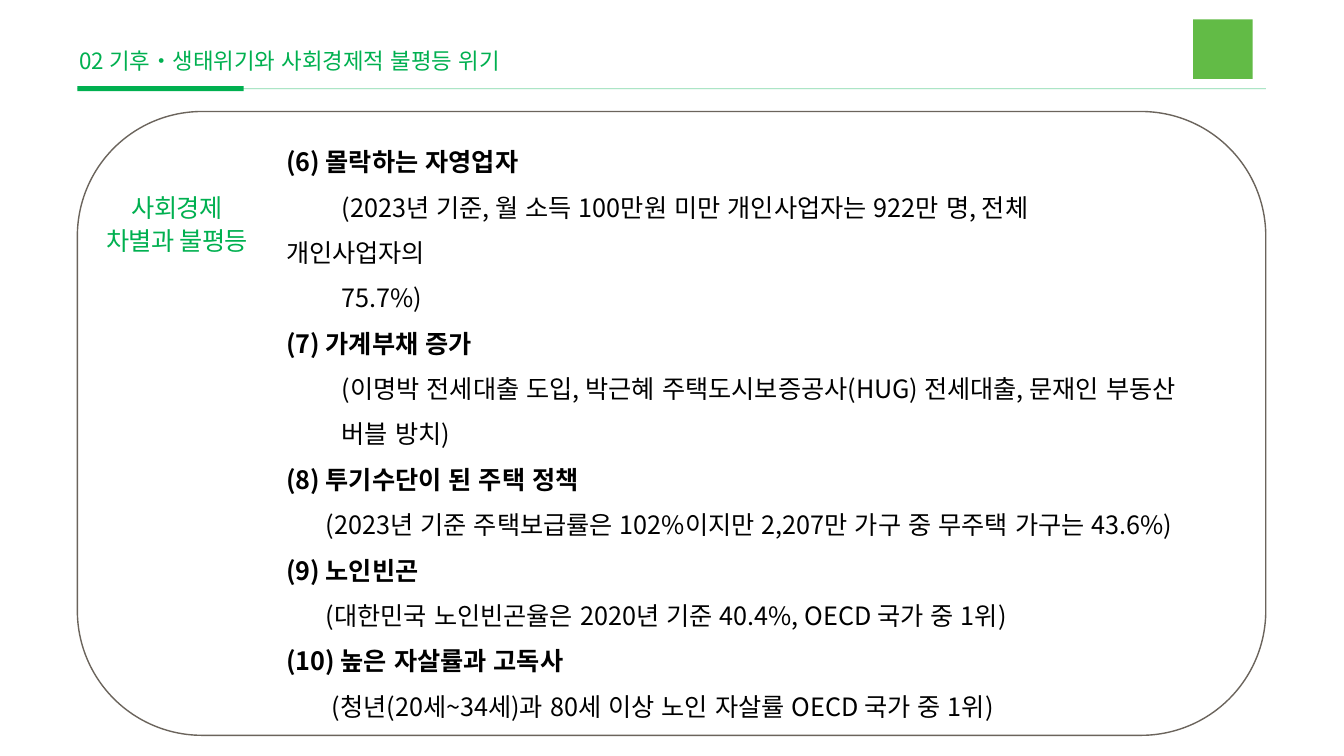
from lxml import etree
from pptx import Presentation
from pptx.dml.color import RGBColor
from pptx.enum.lang import MSO_LANGUAGE_ID
from pptx.enum.shapes import MSO_CONNECTOR, MSO_SHAPE
from pptx.enum.text import MSO_ANCHOR, MSO_AUTO_SIZE, PP_ALIGN
from pptx.oxml.ns import qn
from pptx.util import Cm, Pt

RECT, ROUNDED = MSO_SHAPE.RECTANGLE, MSO_SHAPE.ROUNDED_RECTANGLE
STRAIGHT = MSO_CONNECTOR.STRAIGHT
LEFT, CENTER = PP_ALIGN.LEFT, PP_ALIGN.CENTER
TOP, NO_FIT = MSO_ANCHOR.TOP, MSO_AUTO_SIZE.NONE
KOREAN = MSO_LANGUAGE_ID.KOREAN

FONT = "Noto Sans CJK KR"
COLORS = {"green": "00B050", "block": "62BB46", "frame": "6B645C", "text": "000000"}

# Text, bold and left margin (cm)
BODY = [
    ("(6) 몰락하는 자영업자", True, 0),
    ("(2023년 기준, 월 소득 100만원 미만 개인사업자는 922만 명, 전체", False, 1.4),
    ("개인사업자의", False, 0),
    ("75.7%)", False, 1.4),
    ("(7) 가계부채 증가", True, 0),
    ("(이명박 전세대출 도입, 박근혜 주택도시보증공사(HUG) 전세대출, 문재인 부동산", False, 1.4),
    ("버블 방치)", False, 1.4),
    ("(8) 투기수단이 된 주택 정책", True, 0),
    ("(2023년 기준 주택보급률은 102%이지만 2,207만 가구 중 무주택 가구는 43.6%)", False, 1),
    ("(9) 노인빈곤", True, 0),
    ("(대한민국 노인빈곤율은 2020년 기준 40.4%, OECD 국가 중 1위)", False, 1),
    ("(10) 높은 자살률과 고독사", True, 0),
    ("(청년(20세~34세)과 80세 이상 노인 자살률 OECD 국가 중 1위)", False, 1.15),
]


def rgb(name):
    return RGBColor.from_string(COLORS[name])


def write(p, text, size=18, color="text", bold=False, align=LEFT,
          spacing=1.0, margin=0, tracking=0):
    """Fill one paragraph with a formatted run."""
    p.alignment, p.line_spacing = align, spacing
    pPr = p._p.get_or_add_pPr()
    pPr.set("marL", str(Cm(margin)))
    pPr.set("indent", "0")
    r = p.add_run()
    r.text = text
    r.font.size, r.font.bold, r.font.name = Pt(size), bold, FONT
    r.font.language_id = KOREAN
    r.font.color.rgb = rgb(color)
    rPr = r._r.get_or_add_rPr()
    rPr.set("altLang", "en-US")
    etree.SubElement(rPr, qn("a:ea")).set("typeface", FONT)
    if tracking:
        rPr.set("spc", str(int(tracking * 100)))


def add_box(s, kind, x, y, w, h, fill=None, line=None):
    sp = s.shapes.add_shape(kind, Cm(x), Cm(y), Cm(w), Cm(h))
    sp.shadow.inherit = False
    if fill:
        sp.fill.solid()
        sp.fill.fore_color.rgb = rgb(fill)
    else:
        sp.fill.background()
    if line:
        sp.line.color.rgb = rgb(line)
        sp.line.width = Pt(1)
    else:
        sp.line.fill.background()
    return sp


def add_lines(s, x, y, w, h, lines):
    """Add a text box with one paragraph per (text, format) pair."""
    tf = s.shapes.add_textbox(Cm(x), Cm(y), Cm(w), Cm(h)).text_frame
    tf.word_wrap = True
    for i, (text, style) in enumerate(lines):
        p = tf.add_paragraph() if i else tf.paragraphs[0]
        write(p, text, **style)


def header(s, x, y, w):
    # Title
    title = s.shapes.title
    title.left, title.top = Cm(x - 0.2), Cm(y + 0.56)
    title.width, title.height = Cm(14.63), Cm(1.1)
    tf = title.text_frame
    tf.word_wrap, tf.auto_size, tf.vertical_anchor = True, NO_FIT, TOP
    write(tf.paragraphs[0], "02 기후‧생태위기와 사회경제적 불평등 위기", size=16, color="green")

    # Accent bar and thin rule
    bar = add_box(s, RECT, x, y + 1.68, 4.19, 0.13, fill="green")
    rule_y = bar.top + bar.height // 2
    rule = s.shapes.add_connector(STRAIGHT, Cm(x), rule_y, Cm(x + w), rule_y)
    rule.begin_connect(bar, 1)
    rule.line.color.rgb = rgb("green")
    rule.line.width = Pt(0.5)
    etree.SubElement(rule._element.spPr, qn("a:effectLst"))
    clr = rule._element.spPr.find(".//" + qn("a:srgbClr"))
    etree.SubElement(clr, qn("a:alpha")).set("val", "50000")

    # Corner block
    add_box(s, RECT, x + w - 1.83, y, 1.5, 1.5, fill="block")


def panel(s, x, y, w, h):
    # Rounded frame
    frame = add_box(s, ROUNDED, x, y, w, h, line="frame")
    frame.adjustments[0] = 0.2

    # Side label
    label = dict(color="green", align=CENTER, spacing=1.1, tracking=-0.5)
    add_lines(s, x + 0.46, y + 1.83, 4.11, 1.88,
              [(text, label) for text in ("사회경제", "차별과 불평등")])

    # Numbered issues
    add_lines(s, x + 5.01, y + 0.38, 24.3, 14,
              [(text, dict(bold=bold, margin=margin, spacing=1.5))
               for text, bold, margin in BODY])


def main():
    prs = Presentation()
    prs.slide_width, prs.slide_height = Cm(33.87), Cm(19.05)
    s = prs.slides.add_slide(prs.slide_layouts[5])
    header(s, 1.95, 0.49, 29.95)
    panel(s, 1.95, 2.81, 29.95, 15.72)
    prs.save("out.pptx")


if __name__ == "__main__":
    main()
